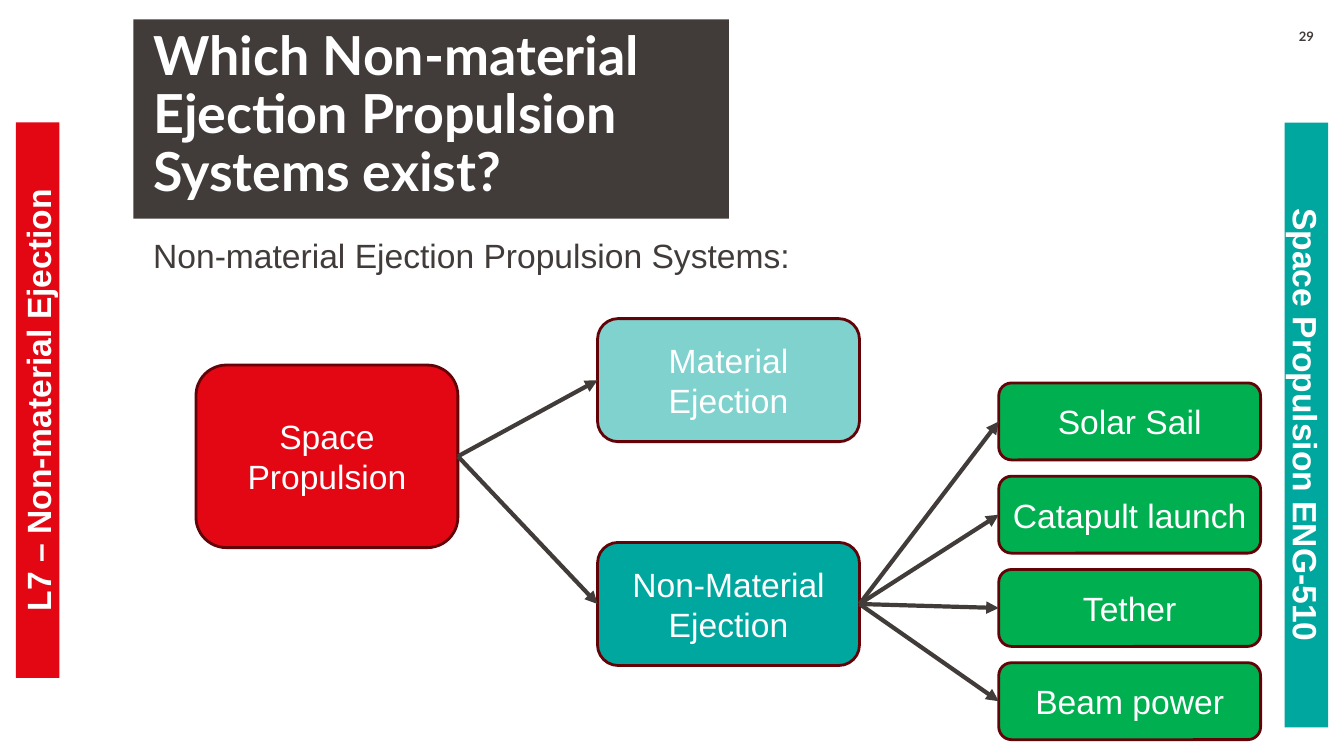
from lxml.etree import SubElement
from pptx import Presentation
from pptx.dml.color import RGBColor
from pptx.enum.shapes import MSO_CONNECTOR, MSO_SHAPE
from pptx.enum.text import MSO_ANCHOR, MSO_AUTO_SIZE, PP_ALIGN
from pptx.oxml.ns import qn
from pptx.util import Cm, Pt

COLORS = {
    "dark": "413C3A",
    "red": "E30613",
    "teal": "00A79F",
    "green": "00B050",
    "border": "630308",
    "white": "FFFFFF",
}
RIGHT_SITE, LEFT_SITE = 3, 1


def rgb(name):
    return RGBColor.from_string(COLORS[name])


class SlideBuilder:
    body_font = "Arial"
    title_font = "Lato"
    body_size = 24

    def __init__(self, prs):
        self.s = prs.slides.add_slide(prs.slide_layouts[5])

    def set_text(self, sp, text, size=body_size, font=body_font, color="white",
                 bold=False, align=PP_ALIGN.CENTER, anchor=MSO_ANCHOR.MIDDLE,
                 insets=(0.25, 0.13, 0.25, 0.13)):
        tf = sp.text_frame
        tf.text = text
        tf.word_wrap = True
        tf.auto_size = MSO_AUTO_SIZE.NONE
        tf.vertical_anchor = anchor
        tf.margin_left, tf.margin_top, tf.margin_right, tf.margin_bottom = map(Cm, insets)
        p = tf.paragraphs[0]
        p.alignment = align
        r = p.runs[0]
        r.font.name, r.font.size, r.font.bold = font, Pt(size), bold
        r.font.color.rgb = rgb(color)
        return p

    def title(self, text, left, top, width, height):
        sp = self.s.shapes.title
        sp.left, sp.top, sp.width, sp.height = map(Cm, (left, top, width, height))
        sp.fill.solid()
        sp.fill.fore_color.rgb = rgb("dark")
        p = self.set_text(sp, text, 38.4, self.title_font, bold=True,
                          align=PP_ALIGN.LEFT, insets=(0.5, 0, 0.2, 0.13))
        p.line_spacing = 0.9

    def text(self, text, left, top, width, height, **style):
        sp = self.s.shapes.add_textbox(*map(Cm, (left, top, width, height)))
        self.set_text(sp, text, color="dark", anchor=MSO_ANCHOR.TOP, **style)

    def shape(self, kind, text, left, top, width, height, fill, bold=False):
        sp = self.s.shapes.add_shape(kind, *map(Cm, (left, top, width, height)))
        sp.shadow.inherit = False
        sp.fill.solid()
        sp.fill.fore_color.rgb = rgb(fill)
        self.set_text(sp, text, bold=bold)
        return sp

    def bar(self, text, left, top, length, fill, rotation):
        sp = self.shape(MSO_SHAPE.RECTANGLE, text, left, top, length, 1.1, fill, bold=True)
        sp.line.fill.background()
        sp.rotation = rotation

    def box(self, text, left, top, height, fill, opacity=None):
        sp = self.shape(MSO_SHAPE.ROUNDED_RECTANGLE, text, left, top, 6.6, height, fill)
        sp.line.color.rgb = rgb("border")
        sp.line.width = Pt(2)
        if opacity:
            clr = sp._element.spPr.find(qn("a:solidFill")).find(qn("a:srgbClr"))
            SubElement(clr, qn("a:alpha"), val=str(opacity * 1000))
        return sp

    def arrow(self, source, target):
        cn = self.s.shapes.add_connector(MSO_CONNECTOR.STRAIGHT, 0, 0, 0, 0)
        cn.begin_connect(source, RIGHT_SITE)
        cn.end_connect(target, LEFT_SITE)
        cn.line.color.rgb = rgb("dark")
        cn.line.width = Pt(3)
        spPr = cn._element.spPr
        SubElement(spPr.find(qn("a:ln")), qn("a:tailEnd"), type="triangle")
        SubElement(spPr, qn("a:effectLst"))


def main():
    prs = Presentation()
    prs.slide_width, prs.slide_height = Cm(33.87), Cm(19.05)
    b = SlideBuilder(prs)

    b.title("Which Non-material Ejection Propulsion Systems exist?", 3.36, 0.49, 15.01, 5.02)
    b.text("Non-material Ejection Propulsion Systems:", 3.36, 5.79, 28.63, 1.3,
           align=PP_ALIGN.LEFT, insets=(0.5, 0.13, 0.25, 0.13))
    b.text("29", 31.97, 0.71, 1.9, 0.6, size=9.3, font=b.title_font, bold=True,
           insets=(0.25, 0, 0.25, 0))
    b.bar("Space Propulsion ENG-510", 25.3, 10.16, 15.24, "teal", 90)
    b.bar("L7 – Non-material Ejection", -6.05, 9.53, 14, "red", 270)

    root = b.box("Space Propulsion", 4.94, 9.2, 4.6, "red")
    material = b.box("Material Ejection", 15.06, 8.03, 3.1, "teal", opacity=50)
    non_material = b.box("Non-Material Ejection", 15.06, 13.67, 3.1, "teal")
    systems = [
        b.box(name, 25.17, 9.65 + 2.35 * i, 1.94, "green")
        for i, name in enumerate(["Solar Sail", "Catapult launch", "Tether", "Beam power"])
    ]

    for branch in (material, non_material):
        b.arrow(root, branch)
    for system in systems:
        b.arrow(non_material, system)

    prs.save("out.pptx")


if __name__ == "__main__":
    main()
